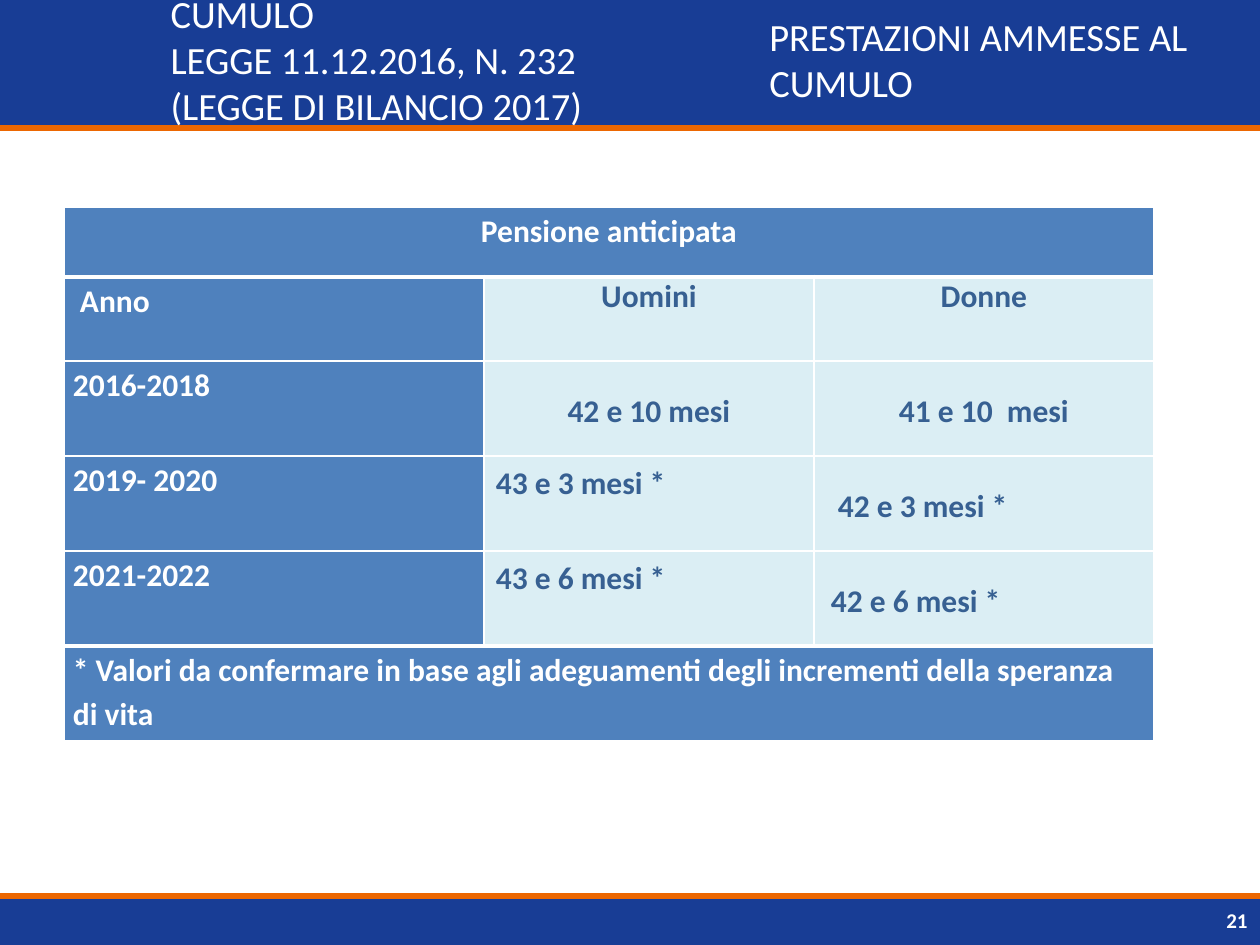
from lxml import etree
from pptx import Presentation
from pptx import util as u
from pptx.dml.color import RGBColor
from pptx.enum import shapes, text
from pptx.oxml import ns

PX = 914400 / 126
NAVY = RGBColor(0x18, 0x3D, 0x95)
ORANGE = RGBColor(0xEC, 0x67, 0x01)
WHITE = RGBColor(0xFF, 0xFF, 0xFF)
BLUE = RGBColor(0x4F, 0x81, 0xBD)
PALE = RGBColor(0xDB, 0xEE, 0xF4)
STEEL = RGBColor(0x37, 0x60, 0x92)

LEFT, MID = text.PP_ALIGN.LEFT, text.PP_ALIGN.CENTER
RIGHT = text.PP_ALIGN.RIGHT
TOP, CENTER = text.MSO_ANCHOR.TOP, text.MSO_ANCHOR.MIDDLE


def px(n):
    return u.Emu(round(n * PX))


def write(frame, words, size=18, color=WHITE, bold=False, align=LEFT, gap=None):
    frame.word_wrap = True
    frame.text = words
    par = frame.paragraphs[0]
    par.alignment = align
    par.line_spacing = gap
    font = par.font
    font.name, font.size, font.bold = "Calibri", u.Pt(size), bold
    font.color.rgb = color


def fit(shape, x, y, w, h):
    shape.left, shape.top, shape.width, shape.height = map(px, (x, y, w, h))


def label(slide, box, words, **form):
    shape = slide.shapes.add_textbox(*map(px, box))
    shape.text_frame.vertical_anchor = CENTER
    write(shape.text_frame, words, **form)


def band(slide, box, edge):
    x, y, w, h = box
    bar = slide.shapes.add_shape(shapes.MSO_SHAPE.RECTANGLE, *map(px, box))
    bar.shadow.inherit = False
    bar.fill.solid()
    bar.fill.fore_color.rgb = NAVY
    bar.line.fill.background()
    rule = slide.shapes.add_connector(
        shapes.MSO_CONNECTOR.STRAIGHT, px(x), px(y + edge), px(x + w), px(y + edge))
    rule.line.color.rgb = ORANGE
    rule.line.width = u.Pt(3)
    etree.SubElement(rule._element.spPr, ns.qn("a:effectLst"))


def header(slide, box):
    x, y, w, h = box
    band(slide, box, h)
    title = slide.shapes.title
    fit(title, x + 158, y, 513, h - 10)
    title.text_frame.auto_size = text.MSO_AUTO_SIZE.NONE
    title.text_frame.vertical_anchor = CENTER
    write(title.text_frame,
          "CUMULO\vLEGGE 11.12.2016, N. 232\v(LEGGE DI BILANCIO 2017)", size=22)
    label(slide, (x + 757, y, w - 757, h - 10),
          "PRESTAZIONI AMMESSE AL CUMULO", size=22)


def footer(slide, box):
    x, y, w, h = box
    band(slide, box, 0)
    label(slide, (x + w - 294, y, 294, h), "21", size=12, bold=True, align=RIGHT)


def border(cell, top, bottom):
    props = cell._tc.get_or_add_tcPr()
    for side, width in (("L", 1), ("R", 1), ("T", top), ("B", bottom)):
        line = etree.SubElement(props, ns.qn(f"a:ln{side}"), w=str(u.Pt(width)))
        fill = etree.SubElement(line, ns.qn("a:solidFill"))
        etree.SubElement(fill, ns.qn("a:srgbClr"), val=str(WHITE))


def fill(cell, words, back=BLUE, color=WHITE, align=LEFT, gap=1.15,
         anchor=TOP, left=9, top=0):
    cell.fill.solid()
    cell.fill.fore_color.rgb = back
    cell.margin_left, cell.margin_right = px(left), px(9)
    cell.margin_top, cell.margin_bottom = px(top), 0
    cell.vertical_anchor = anchor
    write(cell.text_frame, words, color=color, bold=True, align=align, gap=gap)


def pensions(slide, box):
    cols, rows = (420, 330, 340), (70, 84, 95, 95, 95, 95)
    grid = slide.shapes.add_table(len(rows), len(cols), *map(px, box)).table
    for col, w in zip(grid.columns, cols):
        col.width = px(w)
    for row, h in zip(grid.rows, rows):
        row.height = px(h)
    last = len(rows) - 1
    for r in range(len(rows)):
        for c in range(len(cols)):
            border(grid.cell(r, c), 3 if r in (1, last) else 1,
                   3 if r in (0, last - 1) else 1)
    for r in (0, last):
        grid.cell(r, 0).merge(grid.cell(r, 2))

    fill(grid.cell(0, 0), "Pensione anticipata", align=MID)
    fill(grid.cell(last, 0), "* Valori da confermare in base agli adeguamenti "
         "degli incrementi della speranza di vita")
    head = dict(align=MID, gap=1.0)
    even = dict(align=MID, anchor=CENTER)
    men = dict(left=12, top=3)
    body = (
        ("Anno", dict(left=16), "Uomini", head, "Donne", head),
        ("2016-2018", {}, "42 e 10 mesi", even, "41 e 10  mesi", even),
        ("2019- 2020", {}, "43 e 3 mesi *", men,
         "42 e 3 mesi *", dict(anchor=CENTER, left=24)),
        ("2021-2022", {}, "43 e 6 mesi *", men,
         "42 e 6 mesi *", dict(anchor=CENTER, left=17)),
    )
    for r, (year, form, man, mform, woman, wform) in enumerate(body, 1):
        fill(grid.cell(r, 0), year, **form)
        fill(grid.cell(r, 1), man, back=PALE, color=STEEL, **mform)
        fill(grid.cell(r, 2), woman, back=PALE, color=STEEL, **wform)


def main():
    deck = Presentation()
    deck.slide_width, deck.slide_height = px(1260), px(945)
    slide = deck.slides.add_slide(deck.slide_layouts[5])
    header(slide, (0, 0, 1260, 128))
    footer(slide, (0, 896, 1260, 49))
    pensions(slide, (64, 207, 1090, 534))
    tree = slide.shapes._spTree
    title = slide.shapes.title._element
    tree.remove(title)
    tree.insert(6, title)
    deck.save("out.pptx")


if __name__ == "__main__":
    main()
